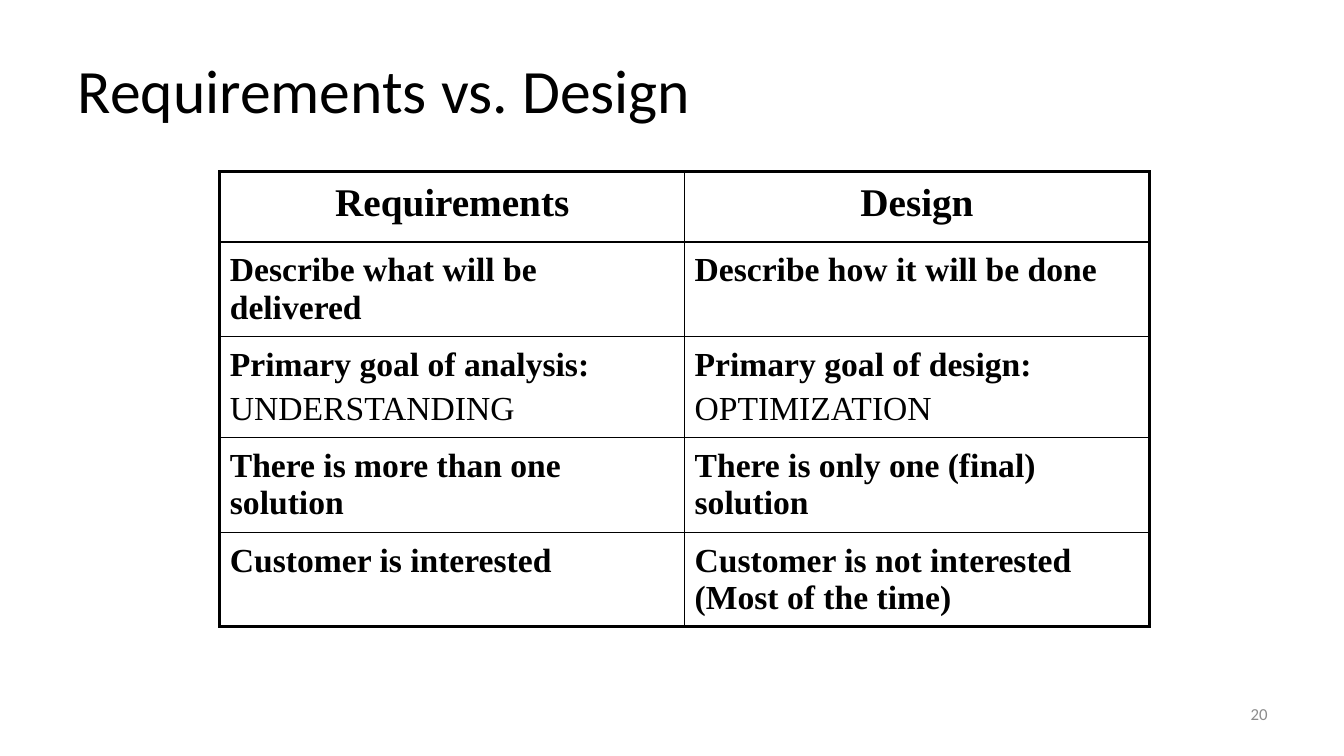
from lxml.etree import SubElement
from pptx import Presentation
from pptx.dml.color import RGBColor
from pptx.enum.text import MSO_ANCHOR as Anchor, MSO_AUTO_SIZE as AutoSize, PP_ALIGN as Align
from pptx.oxml.ns import qn
from pptx.util import Inches, Pt

COLORS = {"ink": "000000", "page_number": "8C8C8C"}
HEADING_FONT = "Calibri"
TABLE_FONT = "Times New Roman"
OUTER_LINE, INNER_LINE = 2.25, 1

COMPARISON = [
    ("Requirements", "Design"),
    ("Describe what will be delivered", "Describe how it will be done"),
    ("Primary goal of analysis:\nUNDERSTANDING", "Primary goal of design:\nOPTIMIZATION"),
    ("There is more than one solution", "There is only one (final) solution"),
    ("Customer is interested", "Customer is not interested (Most of the time)"),
]
ROW_HEIGHTS = [0.7, 0.93, 1, 0.93, 0.93]
COLUMN_WIDTH = 4.61


class SlideBuilder:
    def __init__(self, slide):
        self.slide = slide

    def style(self, paragraph, font, size, color, bold=False, align=Align.LEFT):
        paragraph.alignment = align
        for run in paragraph.runs:
            run.font.name = font
            run.font.size = Pt(size)
            run.font.bold = bold
            run.font.color.rgb = RGBColor.from_string(COLORS[color])

    def title(self, text, left, top, width, height):
        heading = self.slide.shapes.title
        heading.left, heading.top = Inches(left), Inches(top)
        heading.width, heading.height = Inches(width), Inches(height)
        frame = heading.text_frame
        frame.text = text
        frame.auto_size = AutoSize.NONE
        frame.vertical_anchor = Anchor.MIDDLE
        frame.paragraphs[0].line_spacing = 0.9
        self.style(frame.paragraphs[0], HEADING_FONT, 44, "ink")

    def page_number(self, text, left, top, width, height):
        box = self.slide.shapes.add_textbox(
            Inches(left), Inches(top), Inches(width), Inches(height))
        frame = box.text_frame
        frame.word_wrap = True
        frame.vertical_anchor = Anchor.MIDDLE
        frame.text = text
        self.style(frame.paragraphs[0], HEADING_FONT, 12, "page_number", align=Align.RIGHT)

    def borders(self, cell, widths):
        properties = cell._tc.get_or_add_tcPr()
        for position, (side, width) in enumerate(widths.items()):
            line = SubElement(properties, qn(f"a:ln{side}"), w=str(Pt(width)))
            fill = SubElement(line, qn("a:solidFill"))
            SubElement(fill, qn("a:srgbClr"), val=COLORS["ink"])
            properties.insert(position, line)

    def cell(self, cell, text, is_header):
        cell.fill.background()
        cell.margin_left = cell.margin_right = Inches(0.1)
        cell.margin_top = cell.margin_bottom = Inches(0.1)
        cell.text_frame.text = text
        size = 28 if is_header else 24
        align = Align.CENTER if is_header else Align.LEFT
        for index, paragraph in enumerate(cell.text_frame.paragraphs):
            paragraph.space_before = Pt(size * 0.2)
            self.style(paragraph, TABLE_FONT, size, "ink", index == 0, align)

    def table(self, rows, left, top, column_width, row_heights):
        last_row, last_column = len(rows) - 1, len(rows[0]) - 1
        table = self.slide.shapes.add_table(
            len(rows), len(rows[0]), Inches(left), Inches(top),
            Inches(column_width * len(rows[0])), Inches(sum(row_heights))).table
        table.first_row = table.horz_banding = False
        for column in table.columns:
            column.width = Inches(column_width)
        for r, (texts, height) in enumerate(zip(rows, row_heights)):
            table.rows[r].height = Inches(height)
            for c, text in enumerate(texts):
                cell = table.cell(r, c)
                self.cell(cell, text, r == 0)
                on_edge = {"L": c == 0, "R": c == last_column,
                           "T": r == 0, "B": r == last_row}
                self.borders(cell, {side: OUTER_LINE if outer else INNER_LINE
                                    for side, outer in on_edge.items()})


def main():
    deck = Presentation()
    deck.slide_width, deck.slide_height = Inches(13.33), Inches(7.5)
    builder = SlideBuilder(deck.slides.add_slide(deck.slide_layouts[5]))
    builder.title("Requirements vs. Design", 0.67, 0.3, 12, 1.25)
    builder.table(COMPARISON, 2.18, 1.7, COLUMN_WIDTH, ROW_HEIGHTS)
    builder.page_number("20", 9.56, 6.83, 3.11, 0.5)
    deck.save("out.pptx")


if __name__ == "__main__":
    main()
